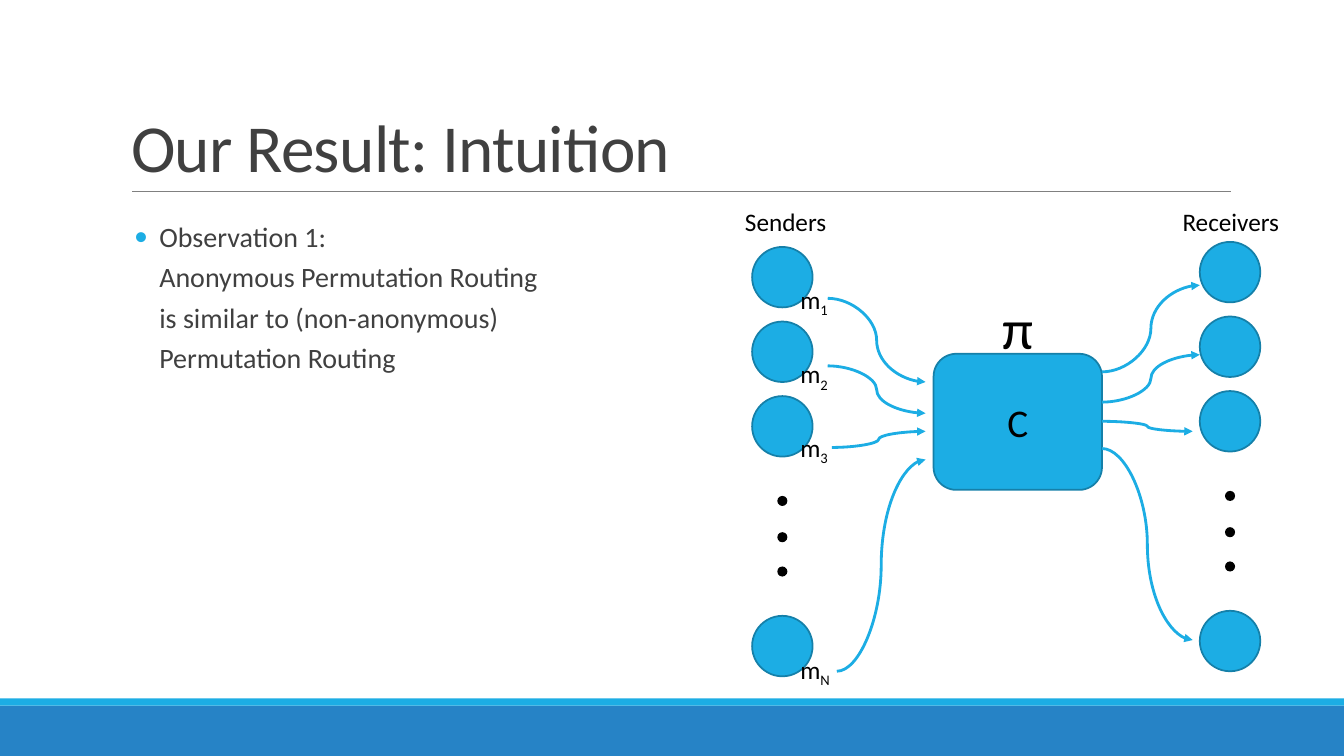
from lxml import etree
from pptx import Presentation
from pptx.dml.color import RGBColor
from pptx.enum.shapes import MSO_CONNECTOR, MSO_SHAPE
from pptx.enum.text import MSO_ANCHOR, MSO_AUTO_SIZE, PP_ALIGN
from pptx.oxml.ns import qn
from pptx.util import Inches, Pt

RECT, ROUNDED, OVAL = MSO_SHAPE.RECTANGLE, MSO_SHAPE.ROUNDED_RECTANGLE, MSO_SHAPE.OVAL
CURVE, STRAIGHT = MSO_CONNECTOR.CURVE, MSO_CONNECTOR.STRAIGHT
LEFT, CENTER = PP_ALIGN.LEFT, PP_ALIGN.CENTER
TOP, MIDDLE, BOTTOM = MSO_ANCHOR.TOP, MSO_ANCHOR.MIDDLE, MSO_ANCHOR.BOTTOM
FIXED = MSO_AUTO_SIZE.NONE

FONT = "Calibri"
COLORS = {"accent": "1CADE4", "edge": "1580A9", "band": "2683C6",
          "rule": "808080", "text": "404040", "black": "000000"}

# Vertical offsets within a column of nodes
NODE_OFFSETS = (0, 0.74, 1.48, 3.66)
DOT_OFFSETS = (2.47, 2.83, 3.17)
NODE_SIZE, DOT_SIZE = 0.6, 0.1

# Curves as x1, y1, x2, y2
CURVES = (
    (8.3, 6.66, 9.18, 4.56), (8.21, 2.96, 9.18, 3.79),
    (8.21, 3.63, 9.18, 4.1), (8.25, 4.44, 9.18, 4.28),
    (10.93, 3.69, 11.9, 2.83), (10.93, 3.99, 11.9, 3.52),
    (10.93, 4.18, 11.83, 4.28), (10.93, 4.45, 11.83, 6.35),
)
MESSAGES = (("1", 2.77), ("2", 3.51), ("3", 4.24), ("N", 6.44))


def color(name):
    return RGBColor.from_string(COLORS[name])


def set_font(p, size, name):
    p.font.name = FONT
    p.font.size = Pt(size)
    p.font.color.rgb = color(name)


def add_shape(shapes, kind, x, y, w, h, fill, edge=None):
    sp = shapes.add_shape(kind, Inches(x), Inches(y), Inches(w), Inches(h))
    sp.shadow.inherit = False
    sp.fill.solid()
    sp.fill.fore_color.rgb = color(fill)
    if edge:
        sp.line.color.rgb = color(edge)
        sp.line.width = Pt(1.25)
    else:
        sp.line.fill.background()
    return sp


def add_line(shapes, kind, ends, name, width, arrow=False):
    line = shapes.add_connector(kind, *(Inches(v) for v in ends))
    line.line.color.rgb = color(name)
    line.line.width = Pt(width)
    sp_pr = line._element.spPr
    if arrow:
        etree.SubElement(sp_pr.find(qn("a:ln")), qn("a:tailEnd"), type="triangle")
    etree.SubElement(sp_pr, qn("a:effectLst"))


def add_label(shapes, text, x, y, w, h=0.4, size=18, subscript=None):
    tf = shapes.add_textbox(Inches(x), Inches(y), Inches(w), Inches(h)).text_frame
    tf.word_wrap = True
    p = tf.paragraphs[0]
    p.add_run().text = text
    if subscript:
        r = p.add_run()
        r.text = subscript
        r._r.get_or_add_rPr().set("baseline", "-25000")
    set_font(p, size, "black")


def add_column(shapes, heading, heading_x, x, y):
    for offset in NODE_OFFSETS:
        add_shape(shapes, OVAL, x, y + offset, NODE_SIZE, NODE_SIZE, "accent", "edge")
    dot_x = x + (NODE_SIZE - DOT_SIZE) / 2
    for offset in DOT_OFFSETS:
        add_shape(shapes, OVAL, dot_x, y + offset, DOT_SIZE, DOT_SIZE, "black")
    add_label(shapes, heading, heading_x, 2, 1.41)


def add_network(shapes):
    box = add_shape(shapes, ROUNDED, 9.26, 3.51, 1.67, 1.35, "accent", "edge")
    tf = box.text_frame
    tf.vertical_anchor = MIDDLE
    p = tf.paragraphs[0]
    p.text = "C"
    p.alignment = CENTER
    set_font(p, 28, "black")
    for ends in CURVES:
        add_line(shapes, CURVE, ends, "accent", 2, arrow=True)
    add_label(shapes, "π", 9.84, 2.86, 0.73, 0.77, 40)


def place(sp, x, y, w, h, anchor):
    sp.left, sp.top, sp.width, sp.height = (Inches(v) for v in (x, y, w, h))
    tf = sp.text_frame
    tf.word_wrap = True
    tf.auto_size = FIXED
    tf.vertical_anchor = anchor
    return tf


def fill_title(sp, text):
    p = place(sp, 1.2, 0.31, 11, 1.59, BOTTOM).paragraphs[0]
    r = p.add_run()
    r.text = text
    r._r.get_or_add_rPr().set("spc", "-50")
    p.alignment = LEFT
    p.line_spacing = 0.85
    set_font(p, 48, "text")


def fill_body(sp, text):
    tf = place(sp, 1.2, 2.06, 4.15, 4.4, TOP)
    tf.margin_left = tf.margin_right = 0
    p = tf.paragraphs[0]
    p.text = text
    p_pr = p._p.get_or_add_pPr()
    p_pr.set("marL", str(Inches(0.38)))
    p_pr.set("indent", str(Inches(-0.25)))
    bullet_color = etree.SubElement(p_pr, qn("a:buClr"))
    etree.SubElement(bullet_color, qn("a:srgbClr"), val=COLORS["accent"])
    etree.SubElement(p_pr, qn("a:buFont"), typeface=FONT)
    etree.SubElement(p_pr, qn("a:buChar"), char="•")
    p.line_spacing = 1.2
    p.space_before = Pt(0)
    p.space_after = Pt(2)
    set_font(p, 20, "text")


def main():
    prs = Presentation()
    prs.slide_width, prs.slide_height = Inches(13.33), Inches(7.5)
    slide = prs.slides.add_slide(prs.slide_layouts[1])
    shapes = slide.shapes

    # Footer bands and title rule
    add_shape(shapes, RECT, 0, 7, 13.33, 0.5, "band")
    add_shape(shapes, RECT, 0, 6.93, 13.33, 0.07, "accent")
    add_line(shapes, STRAIGHT, (1.31, 1.9, 12.21, 1.9), "rule", 0.5)

    # Title and observation
    fill_title(shapes.title, "Our Result: Intuition")
    fill_body(slide.placeholders[1],
              "Observation 1:\vAnonymous Permutation Routing\v"
              "is similar to (non-anonymous) Permutation Routing")

    # Routing diagram
    add_column(shapes.add_group_shape().shapes, "Receivers", 11.63, 11.9, 2.4)
    add_network(shapes.add_group_shape().shapes)
    senders = shapes.add_group_shape().shapes
    add_column(senders, "Senders", 7.29, 7.46, 2.45)
    for subscript, y in MESSAGES:
        add_label(senders, "m", 7.84, y, 0.6, subscript=subscript)

    prs.save("out.pptx")


if __name__ == "__main__":
    main()
